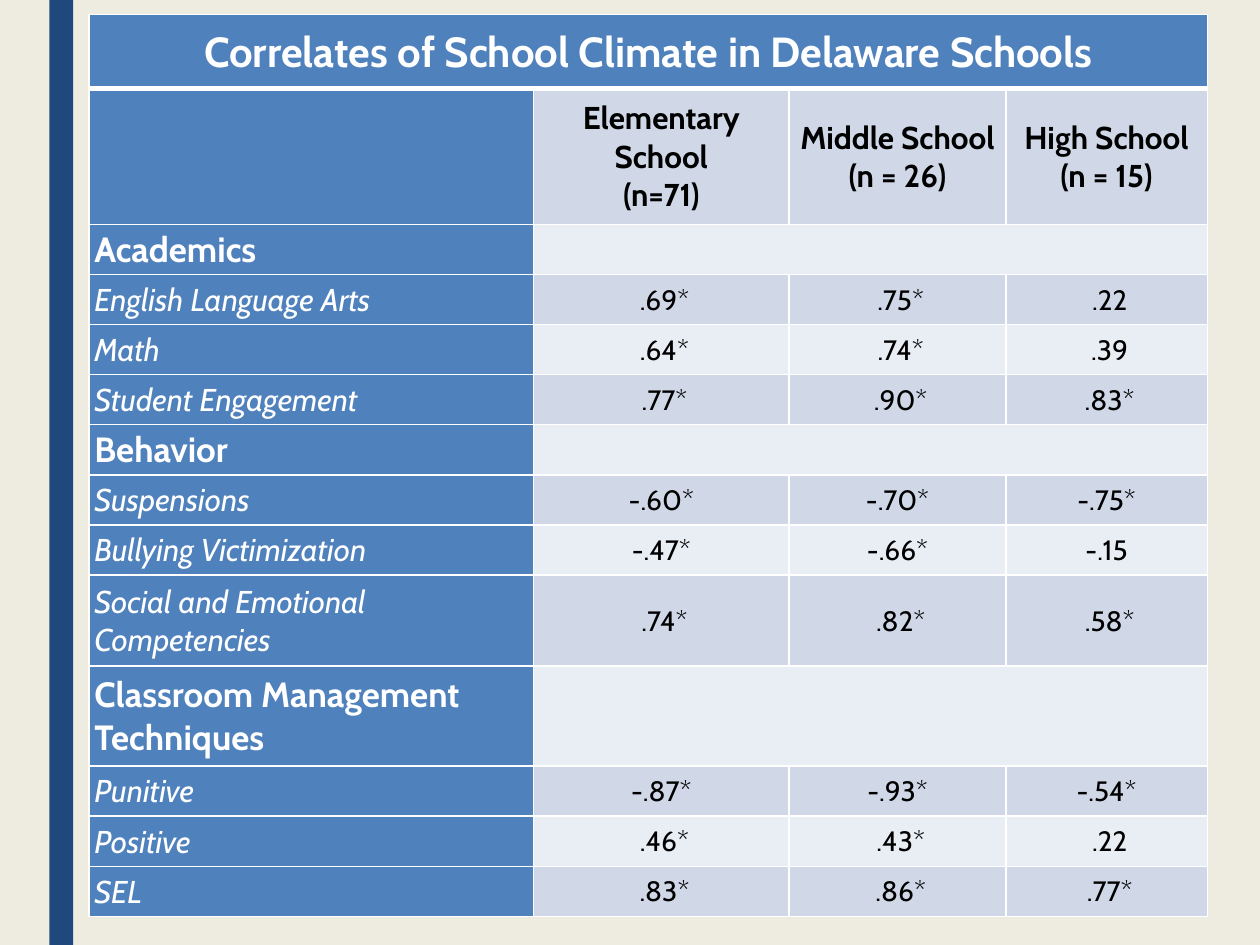
from pptx import Presentation
from pptx.dml.color import RGBColor
from pptx.enum.shapes import MSO_SHAPE as Shape
from pptx.enum.text import MSO_ANCHOR as Anchor, PP_ALIGN as Align
from pptx.oxml import parse_xml
from pptx.oxml.ns import nsdecls
from pptx.util import Pt

TITLE = "Correlates of School Climate in Delaware Schools"
SCHOOLS = ["Elementary School\n(n=71)", "Middle School\n(n = 26)", "High School\n(n = 15)"]
GROUPS = [
    ("Academics", [
        ("English Language Arts", " .69*", " .75*", " .22"),
        ("Math", " .64*", " .74*", " .39"),
        ("Student Engagement", " .77*", " .90*", " .83*"),
    ]),
    ("Behavior", [
        ("Suspensions", "-.60*", "-.70*", "-.75*"),
        ("Bullying Victimization", "-.47*", "-.66*", "-.15"),
        ("Social and Emotional Competencies", " .74*", " .82*", " .58*"),
    ]),
    ("Classroom Management Techniques", [
        ("Punitive", "-.87*", "-.93*", "-.54*"),
        ("Positive", " .46*", " .43*", " .22"),
        ("SEL", " .83*", " .86*", " .77*"),
    ]),
]
THEME = {
    "font": "Cabin", "background": "EEECE1", "stripe": "1F497D", "label": "4F81BD",
    "bands": ("E9EDF4", "D0D8E8"), "white": "FFFFFF", "black": "000000",
}
STYLES = {
    "title": {"size": Pt(24), "bold": True, "italic": False},
    "school": {"size": Pt(18), "bold": True, "italic": False},
    "group": {"size": Pt(20), "bold": True, "italic": False},
    "measure": {"size": Pt(18), "bold": False, "italic": True},
    "value": {"size": Pt(16), "bold": False, "italic": False},
}
INSETS = {"margin_left": Pt(3), "margin_top": Pt(0.7), "margin_right": Pt(3), "margin_bottom": Pt(0),
          "vertical_anchor": Anchor.MIDDLE}
COLUMN_WIDTHS = [253.9, 146.2, 123.8, 115.1]
ROW_HEIGHT = 28.65
TALL_ROWS = {0: 42.5, 1: 77.5, 9: 52, 10: 57.2}
LEFT, TOP = 50.9, 8.2
SLIDE_WIDTH, SLIDE_HEIGHT = 720, 540


def set_all(target, values):
    for key, value in values.items():
        setattr(target, key, value)


def paint(fill, color):
    fill.solid()
    fill.fore_color.rgb = RGBColor.from_string(color)


def add_borders(cell, row):
    widths = {"lnL": 1, "lnR": 1, "lnT": 3 if row == 1 else 1, "lnB": 3 if row == 0 else 1}
    properties = cell._tc.get_or_add_tcPr()
    for position, (side, width) in enumerate(widths.items()):
        properties.insert(position, parse_xml(
            f'<a:{side} {nsdecls("a")} w="{Pt(width)}"><a:solidFill>'
            f'<a:srgbClr val="{THEME["white"]}"/></a:solidFill></a:{side}>'))


def write(cell, text, style, color, align):
    cell.text = text
    for paragraph in cell.text_frame.paragraphs:
        paragraph.alignment = align
        for run in paragraph.runs:
            set_all(run.font, {"name": THEME["font"], **STYLES[style]})
            run.font.color.rgb = RGBColor.from_string(color)


rows = [("title", [TITLE]), ("school", ["", *SCHOOLS])]
for group, measures in GROUPS:
    rows.append(("group", [group]))
    rows += [("measure", measure) for measure in measures]
heights = [TALL_ROWS.get(row, ROW_HEIGHT) for row in range(len(rows))]

deck = Presentation()
set_all(deck, {"slide_width": Pt(SLIDE_WIDTH), "slide_height": Pt(SLIDE_HEIGHT)})
slide = deck.slides.add_slide(deck.slide_layouts[6])
paint(slide.background.fill, THEME["background"])

stripe = slide.shapes.add_shape(Shape.RECTANGLE, Pt(28.2), Pt(0), Pt(13.6), Pt(SLIDE_HEIGHT))
stripe.shadow.inherit = False
paint(stripe.fill, THEME["stripe"])
stripe.line.fill.background()

correlates = slide.shapes.add_table(
    len(rows), len(COLUMN_WIDTHS), Pt(LEFT), Pt(TOP), Pt(sum(COLUMN_WIDTHS)), Pt(sum(heights))).table
set_all(correlates, {"first_row": False, "horz_banding": False})
for column, width in zip(correlates.columns, COLUMN_WIDTHS):
    column.width = Pt(width)

for row, (kind, texts) in enumerate(rows):
    correlates.rows[row].height = Pt(heights[row])
    for col in range(len(COLUMN_WIDTHS)):
        cell = correlates.cell(row, col)
        is_label = col == 0 or kind == "title"
        set_all(cell, INSETS)
        paint(cell.fill, THEME["label"] if is_label else THEME["bands"][row % 2])
        add_borders(cell, row)
        if col < len(texts) and texts[col]:
            write(cell, texts[col],
                  "value" if kind == "measure" and col else kind,
                  THEME["white"] if is_label else THEME["black"],
                  Align.CENTER if col or kind == "title" else Align.LEFT)
    if kind in ("title", "group"):
        first = 0 if kind == "title" else 1
        correlates.cell(row, first).merge(correlates.cell(row, len(COLUMN_WIDTHS) - 1))

deck.save("out.pptx")
